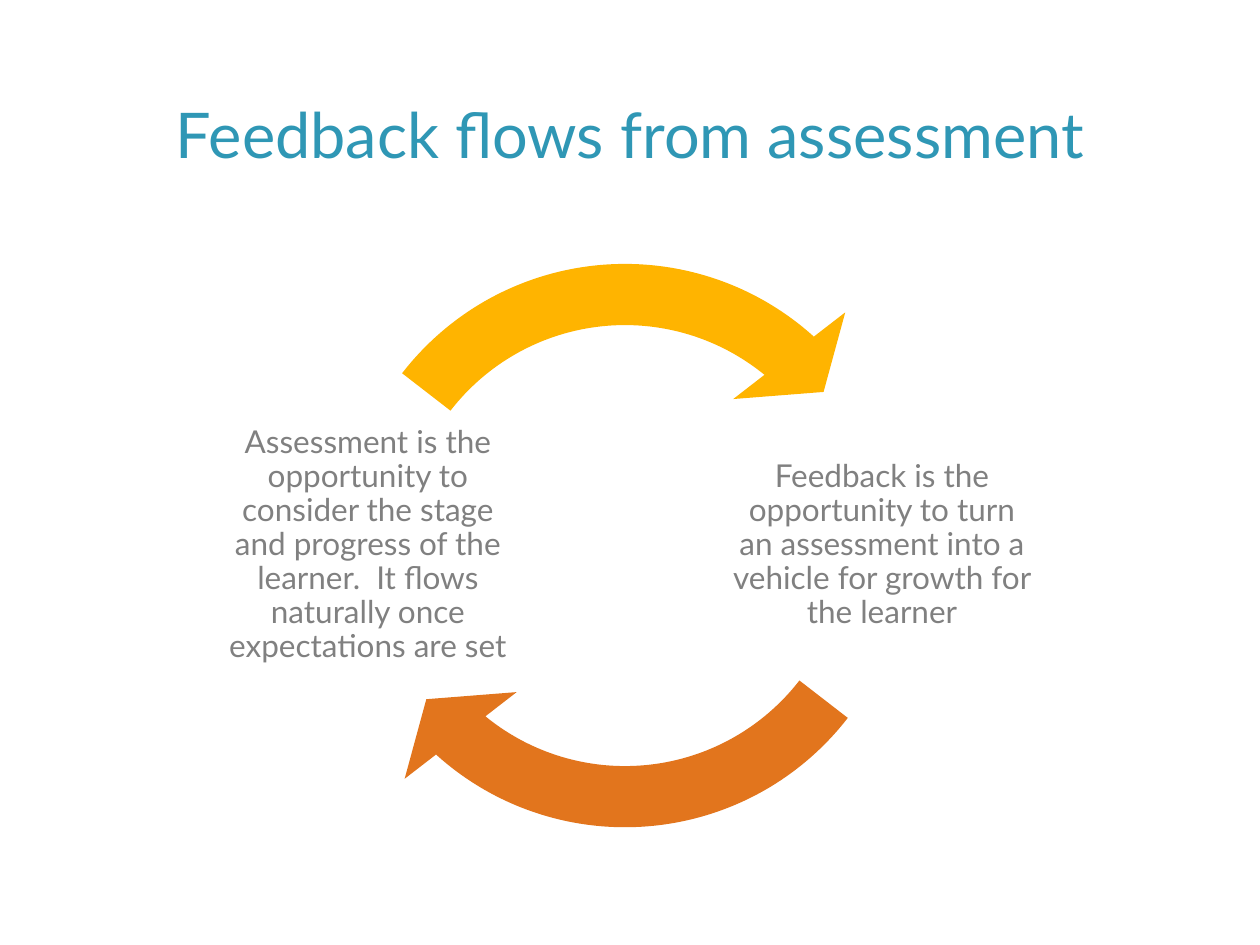
"""Build a slide showing the cycle between assessment and feedback."""
from dataclasses import dataclass

from pptx import Presentation
from pptx.dml.color import RGBColor
from pptx.enum.shapes import MSO_SHAPE
from pptx.enum.text import MSO_ANCHOR, PP_ALIGN
from pptx.util import Inches, Pt

CIRCULAR_ARROW = MSO_SHAPE.CIRCULAR_ARROW
MIDDLE, BOTTOM = MSO_ANCHOR.MIDDLE, MSO_ANCHOR.BOTTOM
CENTER = PP_ALIGN.CENTER


@dataclass(frozen=True)
class Theme:
    font: str = "Lato"
    title_size: int = 36
    body_size: int = 18
    title_color: str = "2F97B5"
    body_color: str = "808080"
    feedback_color: str = "E2751D"
    assessment_color: str = "FFB400"


THEME = Theme()
TITLE = "Feedback flows from assessment"
TITLE_BOX = (0.6, -0.05, 8.8, 1.46)
STAGES = [
    ("Feedback is the opportunity to turn an assessment into a vehicle "
     "for growth for the learner", 1, THEME.feedback_color),
    ("Assessment is the opportunity to consider the stage and progress of "
     "the learner.  It flows naturally once expectations are set", -1,
     THEME.assessment_color),
]
CYCLE_CENTER = (4.96, 4.33)
LABEL_SIZE = 2.49
LABEL_OFFSET = 2.04
LABEL_INSET = 0.03
ARROW_SIZE = 5.11
BAND_WIDTH = 0.095
HEAD_WIDTH = 0.11
HEAD_SWEEP = 11.41
END_ANGLE = 130.87
START_ANGLE = 37.72
DEGREE = 0.6


def centered_square(center_x, center_y, size):
    return center_x - size / 2, center_y - size / 2, size, size


def add_text(slide, text, box, size, color, anchor):
    shape = slide.shapes.add_textbox(*map(Inches, box))
    frame = shape.text_frame
    frame.word_wrap = True
    frame.vertical_anchor = anchor
    paragraph = frame.paragraphs[0]
    paragraph.text = text
    paragraph.alignment = CENTER
    paragraph.font.name = THEME.font
    paragraph.font.size = Pt(size)
    paragraph.font.color.rgb = RGBColor.from_string(color)
    return frame


def add_label(slide, text, side):
    center_x, center_y = CYCLE_CENTER
    box = centered_square(center_x + side * LABEL_OFFSET, center_y, LABEL_SIZE)
    frame = add_text(slide, text, box, THEME.body_size, THEME.body_color, MIDDLE)
    frame.margin_left = frame.margin_right = Inches(LABEL_INSET)
    frame.margin_top = frame.margin_bottom = Inches(LABEL_INSET)
    frame.paragraphs[0].line_spacing = 0.9


def add_arrow(slide, turn, color):
    box = centered_square(*CYCLE_CENTER, ARROW_SIZE)
    shape = slide.shapes.add_shape(CIRCULAR_ARROW, *map(Inches, box))
    angles = (HEAD_SWEEP, END_ANGLE + turn, START_ANGLE + turn)
    values = (BAND_WIDTH, *(angle * DEGREE for angle in angles), HEAD_WIDTH)
    for index, value in enumerate(values):
        shape.adjustments[index] = value
    shape.shadow.inherit = False
    shape.fill.solid()
    shape.fill.fore_color.rgb = RGBColor.from_string(color)
    shape.line.fill.background()


def main():
    presentation = Presentation()
    presentation.slide_width, presentation.slide_height = Inches(10), Inches(7.5)
    slide = presentation.slides.add_slide(presentation.slide_layouts[6])
    add_text(slide, TITLE, TITLE_BOX, THEME.title_size, THEME.title_color, BOTTOM)
    for index, (text, side, color) in enumerate(STAGES):
        add_label(slide, text, side)
        add_arrow(slide, index * 360 / len(STAGES), color)
    presentation.save("out.pptx")


if __name__ == "__main__":
    main()
